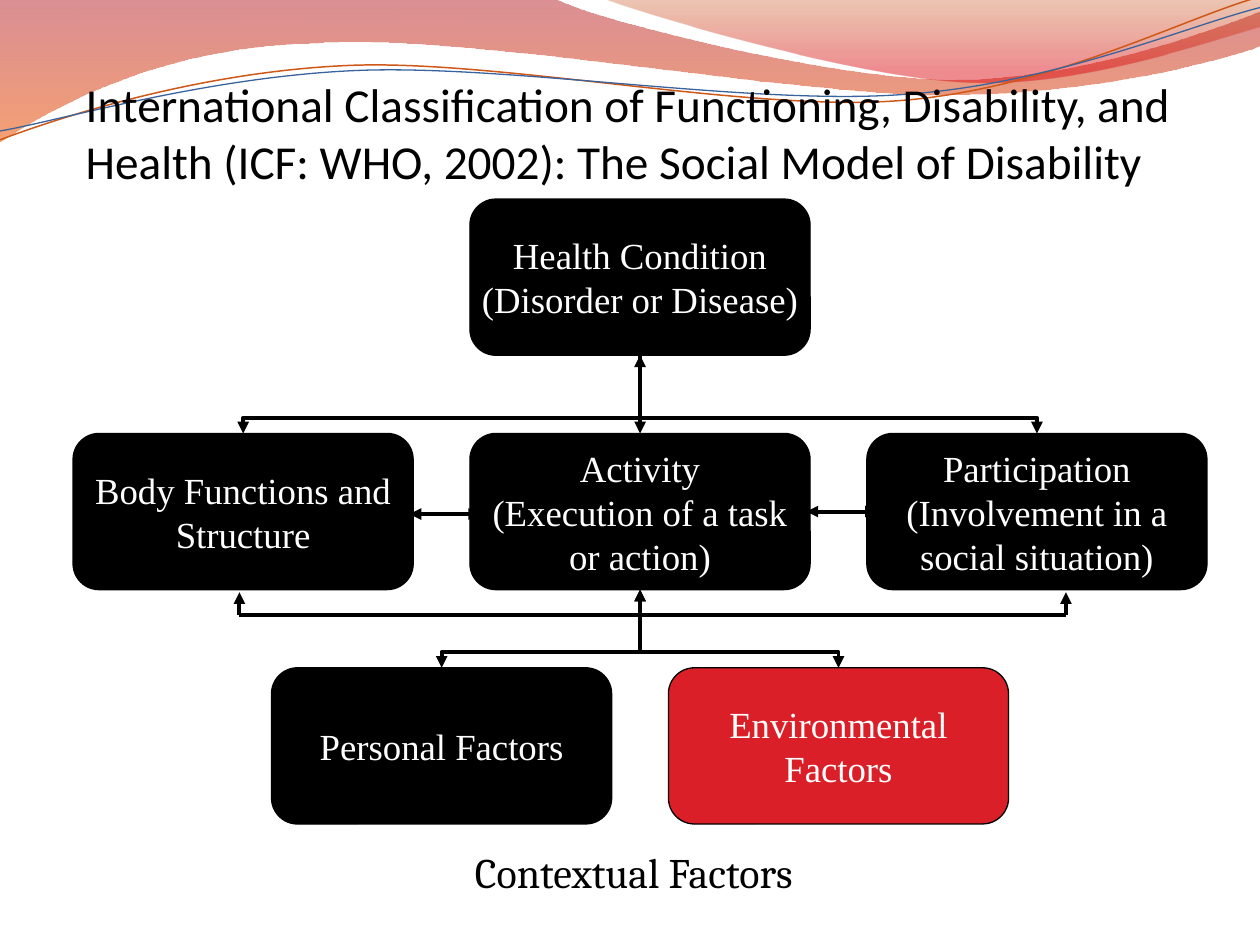
from lxml.etree import SubElement
from pptx import Presentation
from pptx.dml.color import RGBColor
from pptx.enum.shapes import MSO_CONNECTOR as Connector, MSO_SHAPE as Shape
from pptx.enum.text import MSO_ANCHOR as Anchor, MSO_AUTO_SIZE as AutoSize, PP_ALIGN as Align
from pptx.oxml.ns import qn
from pptx.util import Inches, Pt

COLORS = {
    "black": "000000", "white": "FFFFFF", "red": "DA1F28",
    "crimson": "AF0911", "orange": "EE5300", "rust": "C24400", "scarlet": "DC000B",
    "copper": "CF5818", "blue": "39639D",
}

# Diagram grid: columns and rows are counted from the "Body Functions" column
# and the "Health Condition" row; half columns are allowed.
LEFT, TOP, COLUMN_STEP, ROW_STEP = 0.58, 1.58, 3.15, 1.86
BOX_WIDTH, BOX_HEIGHT = 2.7, 1.24

BOXES = [
    (1, 0, ["Health Condition", "(Disorder or Disease)"], "black"),
    (0, 1, ["Body Functions and Structure"], "black"),
    (1, 1, ["Activity", "(Execution of a task or action)"], "black"),
    (2, 1, ["Participation", "(Involvement in a social situation)"], "black"),
    (0.5, 2, ["Personal Factors"], "black"),
    (1.5, 2, ["Environmental Factors"], "red"),
]

# Waves: a start point, then straight (2 numbers) or cubic (6 numbers) segments
BANDS = [
    ([(0, 0), (4.4, -0.01), (4.76, 0.17, 6.64, 0.63, 7.58, 0.63),
      (8.53, 0.63, 9.58, 0.26, 10, 0.09), (10.01, 0.36),
      (9.83, 0.44, 8.7, 0.76, 7.46, 0.75), (6.22, 0.75, 3.82, 0.28, 2.57, 0.34),
      (1.29, 0.36, 0.46, 0.83, -0.01, 1.13)],
     [(0, "crimson", 45), (1, "orange", 55)]),
    ([(4.79, -0.01), (5.09, 0.11, 6.82, 0.62, 7.69, 0.65),
      (8.56, 0.69, 9.61, 0.32, 10, 0.21), (10, 0)],
     [(0, "rust", 30), (0.8, "scarlet", 45)]),
]
STRANDS = [
    ([(0, 1.11), (0.48, 0.93, 1.58, 0.57, 2.77, 0.52),
      (3.95, 0.47, 5.93, 0.89, 7.13, 0.8), (8.33, 0.71, 9.38, 0.15, 9.98, -0.02)],
     "copper", 0.85),
    ([(0, 1.04), (0.47, 0.96, 1.64, 0.61, 2.83, 0.56),
      (4.03, 0.51, 5.97, 0.84, 7.17, 0.75), (8.36, 0.67, 9.41, 0.21, 10, 0.06)],
     "blue", 0.75),
]


def rgb(name):
    return RGBColor.from_string(COLORS[name])


def add_curve(slide, outline, close):
    """Draw an outline; every cubic segment becomes one Bezier curve."""
    points = [(Inches(segment[i]), Inches(segment[i + 1]))
              for segment in outline for i in range(0, len(segment), 2)]
    builder = slide.shapes.build_freeform(*points[0])
    builder.add_line_segments(points[1:], close=close)
    shape = builder.convert_to_shape()
    shape.shadow.inherit = False
    lines = iter(list(shape.element.iter(qn("a:lnTo"))))
    for segment in outline[1:]:
        first = next(lines)
        if len(segment) == 6:
            curve = first.makeelement(qn("a:cubicBezTo"))
            first.addprevious(curve)
            for line in (first, next(lines), next(lines)):
                curve.append(line[0])
                line.getparent().remove(line)
    return shape


def add_band(slide, outline, stops):
    shape = add_curve(slide, outline, close=True)
    shape.line.fill.background()
    shape.fill.gradient()
    shape.fill.gradient_angle = 270
    for stop, (position, color, _) in zip(shape.fill.gradient_stops, stops):
        stop.position = position
        stop.color.rgb = rgb(color)
    for element, (_, _, opacity) in zip(shape.element.iter(qn("a:srgbClr")), stops):
        SubElement(element, qn("a:alpha")).set("val", str(opacity * 1000))
    return shape


def add_strand(slide, outline, color, width):
    shape = add_curve(slide, outline, close=False)
    shape.fill.background()
    shape.line.color.rgb = rgb(color)
    shape.line.width = Pt(width)
    return shape


def move_to_master(master, shapes):
    """Put the shapes behind the placeholders of the slide master."""
    for index, shape in enumerate(shapes):
        shape.element.nvSpPr.cNvPr.set("id", str(100 + index))
        master.shapes.element.insert(2 + index, shape.element)


def add_run(paragraph, text, font, size, color):
    run = paragraph.add_run()
    run.text = text
    run.font.name = font
    run.font.size = Pt(size)
    run.font.color.rgb = rgb(color)


def set_insets(frame, left=0, top=0, right=0, bottom=0):
    frame.margin_left, frame.margin_top = Inches(left), Inches(top)
    frame.margin_right, frame.margin_bottom = Inches(right), Inches(bottom)


def add_title(slide, text):
    title = slide.shapes.title
    title.left, title.top = Inches(0.68), Inches(0.25)
    title.width, title.height = Inches(9.25), Inches(1.25)
    frame = title.text_frame
    frame.word_wrap = True
    frame.auto_size = AutoSize.NONE
    frame.vertical_anchor = Anchor.BOTTOM
    set_insets(frame, top=0.05)
    frame.paragraphs[0].alignment = Align.LEFT
    add_run(frame.paragraphs[0], text, "Calibri", 27, "black")


def add_box(slide, column, row, lines, color):
    shape = slide.shapes.add_shape(
        Shape.ROUNDED_RECTANGLE, Inches(LEFT + column * COLUMN_STEP),
        Inches(TOP + row * ROW_STEP), Inches(BOX_WIDTH), Inches(BOX_HEIGHT))
    shape.shadow.inherit = False
    shape.fill.solid()
    shape.fill.fore_color.rgb = rgb(color)
    shape.line.color.rgb = rgb("black")
    shape.line.width = Pt(0.75)
    frame = shape.text_frame
    frame.word_wrap = True
    frame.vertical_anchor = Anchor.MIDDLE
    set_insets(frame)
    for index, text in enumerate(lines):
        paragraph = frame.add_paragraph() if index else frame.paragraphs[0]
        paragraph.alignment = Align.CENTER
        add_run(paragraph, text, "Times New Roman", 21, "white")


def add_line(slide, start, end, head=False, tail=False, kind=Connector.STRAIGHT):
    connector = slide.shapes.add_connector(kind, *map(Inches, start + end))
    connector.line.color.rgb = rgb("black")
    connector.line.width = Pt(2.25)
    properties = connector.element.spPr
    line = properties.find(qn("a:ln"))
    for tag, wanted in (("a:headEnd", head), ("a:tailEnd", tail)):
        if wanted:
            SubElement(line, qn(tag)).set("type", "triangle")
    SubElement(properties, qn("a:effectLst"))
    return connector


def add_branch(slide, column, row, tail=False):
    """Elbow from the top of a box up to the middle box of the row above."""
    x, parent_x = (LEFT + BOX_WIDTH / 2 + c * COLUMN_STEP for c in (column, 1))
    y = TOP + row * ROW_STEP
    rise, run = ROW_STEP - BOX_HEIGHT, abs(x - parent_x)
    left, top = (x + parent_x - rise) / 2, y - (rise + run) / 2
    connector = add_line(slide, (left, top), (left + rise, top + run),
                         head=True, tail=tail, kind=Connector.ELBOW)
    # A quarter turn makes the elbow leave the box vertically
    frame = connector.element.spPr.find(qn("a:xfrm"))
    frame.set("rot", str((90 if x > parent_x else 270) * 60000))
    if x > parent_x:
        frame.set("flipH", "1")
    adjustments = connector.element.spPr.find(qn("a:prstGeom")).get_or_add_avLst()
    guide = SubElement(adjustments, qn("a:gd"))
    guide.set("name", "adj1")
    guide.set("fmla", "val 20200")


def add_caption(slide, text):
    box = slide.shapes.add_textbox(Inches(3.67), Inches(6.67), Inches(3.33), Inches(0.5))
    box.text_frame.word_wrap = True
    add_run(box.text_frame.paragraphs[0], text, "Cambria", 24, "black")


def main():
    presentation = Presentation()
    presentation.slide_width, presentation.slide_height = Inches(10), Inches(7.5)
    slide = presentation.slides.add_slide(presentation.slide_layouts[5])

    # Wave decoration on the master, then the title
    waves = [add_band(slide, *band) for band in BANDS]
    waves += [add_strand(slide, *strand) for strand in STRANDS]
    move_to_master(presentation.slide_master, waves)
    add_title(slide, "International Classification of Functioning, Disability, and "
                     "Health (ICF: WHO, 2002): The Social Model of Disability")

    # Links between rows, then the boxes over them
    for column in (1.5, 0.5):
        add_branch(slide, column, 2, tail=True)
    add_branch(slide, 2, 1)
    add_line(slide, (5.08, 3.44), (5.08, 2.82), head=True, tail=True)
    add_branch(slide, 0, 1)
    for box in BOXES:
        add_box(slide, *box)

    # Bracket below the middle row and links between its boxes
    add_line(slide, (1.9, 4.88), (8.46, 4.88))
    for x in (1.9, 8.46):
        add_line(slide, (x, 4.88), (x, 4.7), tail=True)
    for x, y in ((3.25, 4.08), (6.4, 4.06)):
        add_line(slide, (x, y), (x + 0.56, y), head=True, tail=True)

    add_caption(slide, "Contextual Factors")
    presentation.save("out.pptx")


if __name__ == "__main__":
    main()
